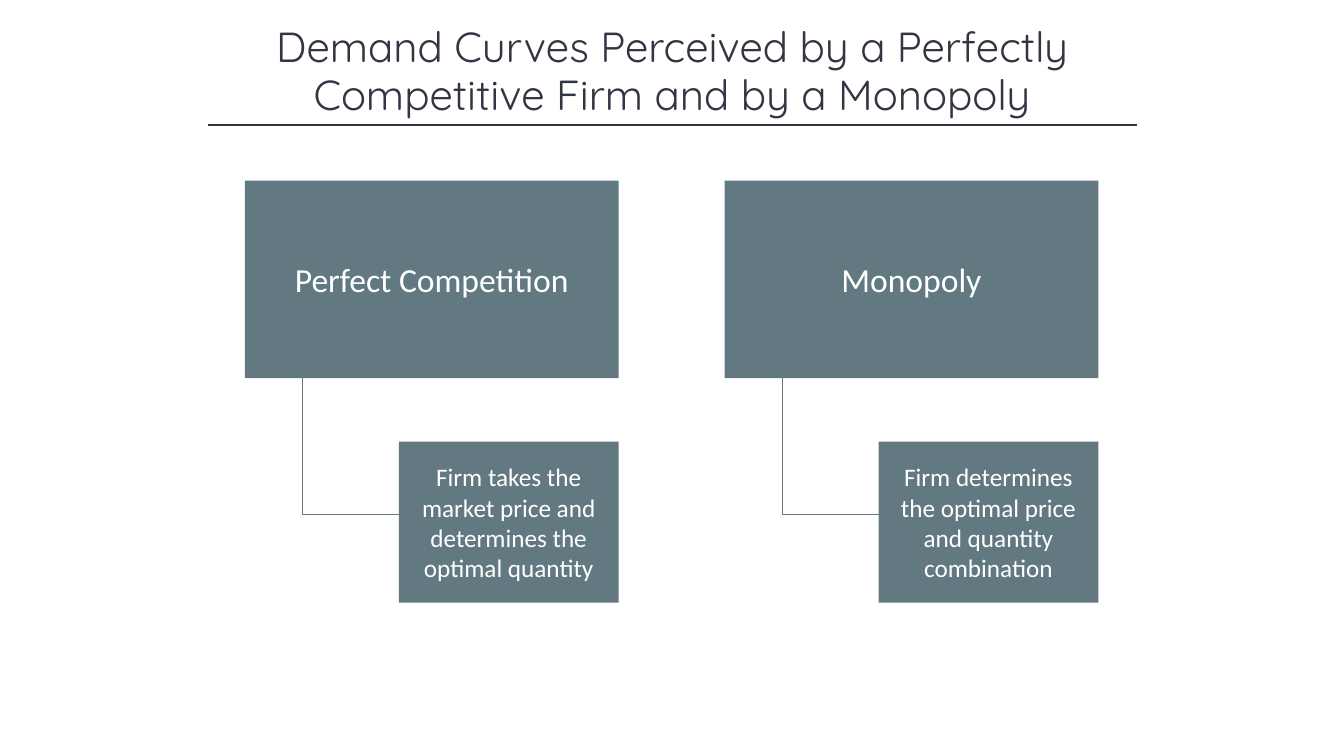
from lxml import etree
from pptx import Presentation
from pptx.dml.color import RGBColor
from pptx.enum.shapes import MSO_CONNECTOR as CONNECTOR, MSO_SHAPE as SHAPE
from pptx.enum.text import MSO_ANCHOR as ANCHOR, PP_ALIGN as ALIGN
from pptx.oxml.ns import qn
from pptx.util import Cm, Pt

COLORS = {"ink": "323542", "slate": "627981", "white": "FFFFFF"}

presentation = Presentation()
presentation.slide_width, presentation.slide_height = Cm(33.87), Cm(19.05)
slide = presentation.slides.add_slide(presentation.slide_layouts[6])


def write(shape, text, font_name, size, color, anchor, spacing):
    frame = shape.text_frame
    paragraph = frame.paragraphs[0]
    run = paragraph.add_run()
    run.text = text
    run.font.color.rgb = RGBColor.from_string(COLORS[color])
    formats = [
        (frame, {"word_wrap": True, "vertical_anchor": anchor}),
        (paragraph, {"alignment": ALIGN.CENTER, "line_spacing": spacing}),
        (run.font, {"name": font_name, "size": Pt(size)}),
    ]
    for target, values in formats:
        for name, value in values.items():
            setattr(target, name, value)


def add_line(start_x, start_y, end_x, end_y, color, width):
    line = slide.shapes.add_connector(
        CONNECTOR.STRAIGHT, Cm(start_x), Cm(start_y), Cm(end_x), Cm(end_y))
    line.line.color.rgb = RGBColor.from_string(COLORS[color])
    line.line.width = Pt(width)
    etree.SubElement(line._element.spPr, qn("a:effectLst"))


title = slide.shapes.add_textbox(Cm(4.24), Cm(0.33), Cm(25.4), Cm(2.82))
write(title, "Demand Curves Perceived by a Perfectly Competitive Firm and by a Monopoly",
      "Quicksand", 30, "ink", ANCHOR.BOTTOM, 0.95)
add_line(5.23, 3.15, 28.65, 3.15, "ink", 1)

markets = [
    ("Perfect Competition", "Firm takes the market price and determines the optimal quantity"),
    ("Monopoly", "Firm determines the optimal price and quantity combination"),
]
first_left, column_step = 6.17, 12.09
market_top, market_width, market_height = 4.55, 9.42, 4.98
choice_top, choice_width, choice_height = 11.13, 5.54, 4.06
stem_offset, branch_y = 1.45, 12.95

for column, (market, choice) in enumerate(markets):
    left = first_left + column * column_step
    choice_left = left + market_width - choice_width
    stem_x = left + stem_offset
    add_line(stem_x, market_top + market_height, stem_x, branch_y, "slate", 0.5)
    add_line(stem_x, branch_y, choice_left, branch_y, "slate", 0.5)
    boxes = [
        (market, 24, left, market_top, market_width, market_height),
        (choice, 18, choice_left, choice_top, choice_width, choice_height),
    ]
    for text, size, *bounds in boxes:
        box = slide.shapes.add_shape(SHAPE.RECTANGLE, *map(Cm, bounds))
        box.shadow.inherit = False
        box.fill.solid()
        box.fill.fore_color.rgb = RGBColor.from_string(COLORS["slate"])
        box.line.fill.background()
        write(box, text, "Calibri", size, "white", ANCHOR.MIDDLE, 1.0)

presentation.save("out.pptx")
